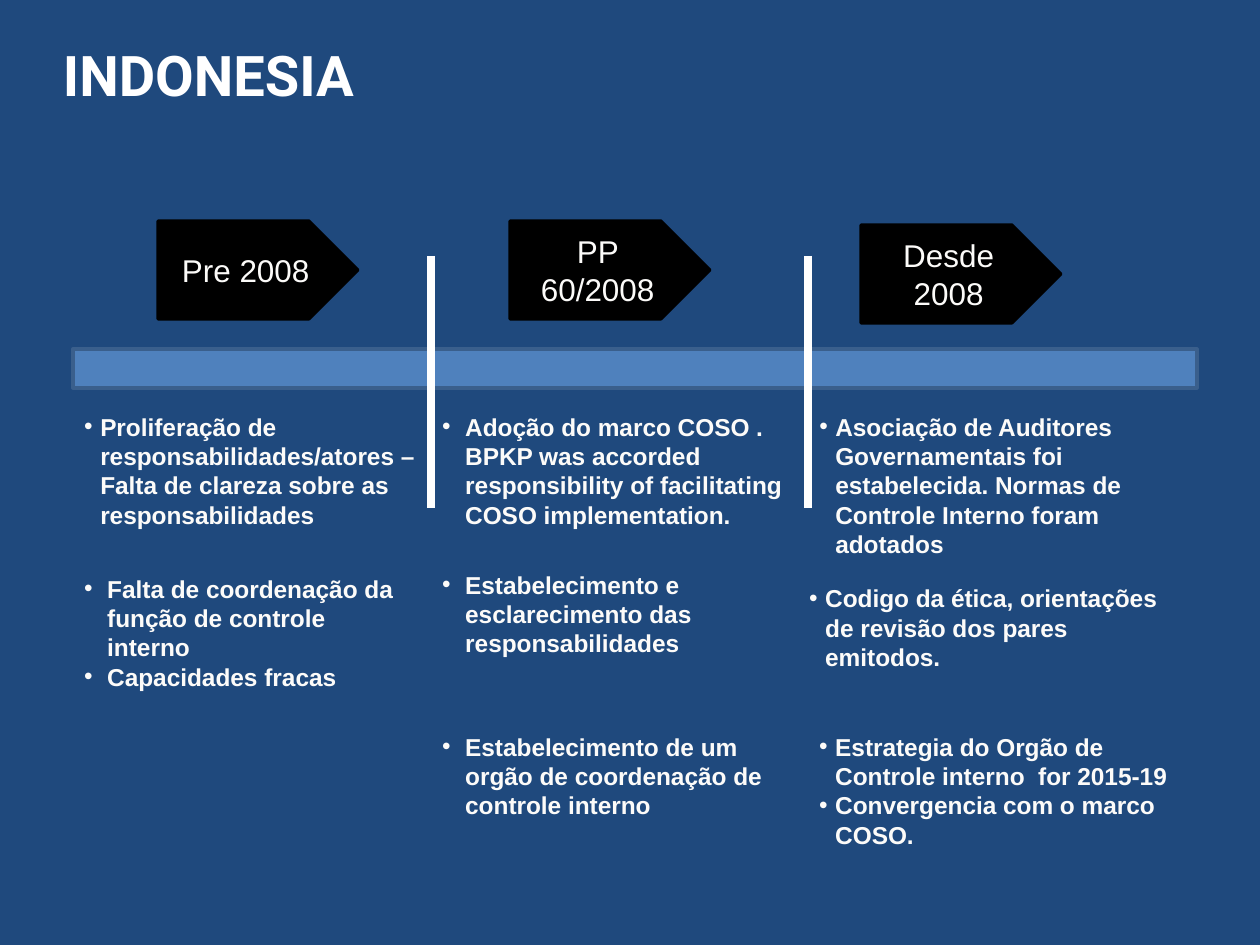
from dataclasses import dataclass

from lxml import etree
from pptx import Presentation
from pptx.dml.color import RGBColor
from pptx.enum.shapes import MSO_CONNECTOR as Connector, MSO_SHAPE as Shape
from pptx.enum.text import MSO_ANCHOR as Anchor, MSO_AUTO_SIZE as AutoSize, PP_ALIGN as Align
from pptx.oxml.ns import qn
from pptx.util import Pt

EMU_PER_PX = 8000


def px(length):
    return length * EMU_PER_PX


@dataclass(frozen=True)
class Theme:
    background: str = "1F497D"
    title: str = "FFFFFF"
    text: str = "FCFBF9"
    tag: str = "000000"
    bar: str = "4F81BD"
    bar_line: str = "3A5F8C"
    divider: str = "FFFFFF"
    title_font: str = "Roboto"
    body_font: str = "Arial"
    title_size: float = 35.3
    tag_size: float = 19.8
    body_size: float = 15.4
    outline: float = 2
    divider_width: float = 4.5


class TimelineSlide:
    def __init__(self, slide, theme):
        self.slide = slide
        self.theme = theme
        fill = slide.background.fill
        fill.solid()
        fill.fore_color.rgb = RGBColor.from_string(theme.background)

    def style(self, paragraph, size, color, name, bold=False):
        font = paragraph.font
        font.size, font.name, font.bold = Pt(size), name, bold
        font.color.rgb = RGBColor.from_string(color)

    def paragraphs(self, frame, texts):
        """Fill the frame with one paragraph per text and return them."""
        frame.text = "\n".join(texts)
        return frame.paragraphs

    def text_frame(self, left, top, width, height):
        box = self.slide.shapes.add_textbox(px(left), px(top), px(width), px(height))
        box.text_frame.word_wrap = True
        return box.text_frame

    def title(self, text, left, top, width, height):
        frame = self.text_frame(left, top, width, height)
        frame.margin_left = frame.margin_right = frame.margin_top = frame.margin_bottom = 0
        frame.vertical_anchor = Anchor.MIDDLE
        for paragraph in self.paragraphs(frame, [text]):
            paragraph.line_spacing = 0.9
            self.style(paragraph, self.theme.title_size, self.theme.title,
                       self.theme.title_font, bold=True)

    def block(self, kind, left, top, width, height, fill, line):
        shape = self.slide.shapes.add_shape(kind, px(left), px(top), px(width), px(height))
        shape.shadow.inherit = False
        shape.fill.solid()
        shape.fill.fore_color.rgb = RGBColor.from_string(fill)
        shape.line.color.rgb = RGBColor.from_string(line)
        shape.line.width = Pt(self.theme.outline)
        return shape

    def bar(self, left, top, width, height):
        self.block(Shape.RECTANGLE, left, top, width, height,
                   self.theme.bar, self.theme.bar_line)

    def tag(self, texts, left, top, width=200, height=98):
        shape = self.block(Shape.PENTAGON, left, top, width, height,
                           self.theme.tag, self.theme.tag)
        frame = shape.text_frame
        frame.word_wrap = True
        frame.vertical_anchor = Anchor.MIDDLE
        for paragraph in self.paragraphs(frame, texts):
            paragraph.alignment = Align.CENTER
            self.style(paragraph, self.theme.tag_size, self.theme.text, self.theme.body_font)

    def divider(self, left, top, bottom):
        line = self.slide.shapes.add_connector(
            Connector.STRAIGHT, px(left), px(top), px(left), px(bottom))
        line.line.color.rgb = RGBColor.from_string(self.theme.divider)
        line.line.width = Pt(self.theme.divider_width)
        etree.SubElement(line._element.spPr, qn("a:effectLst"))

    def bullets(self, texts, left, top, width, height, indent):
        frame = self.text_frame(left, top, width, height)
        frame.auto_size = AutoSize.SHAPE_TO_FIT_TEXT
        for paragraph in self.paragraphs(frame, texts):
            properties = paragraph._p.get_or_add_pPr()
            properties.set("marL", str(px(indent)))
            properties.set("indent", str(-px(indent)))
            etree.SubElement(properties, qn("a:buFont"), typeface=self.theme.body_font)
            etree.SubElement(properties, qn("a:buChar"), char="•")
            self.style(paragraph, self.theme.body_size, self.theme.text,
                       self.theme.body_font, bold=True)


TAGS = [
    (["Pre 2008"], 158, 221),
    (["PP 60/2008"], 510, 221),
    (["Desde", "2008"], 861, 225),
]
DIVIDERS = [431, 808]
FIRST, SECOND, THIRD = 73, *DIVIDERS
NARROW, WIDE = 16, 23

# texts, left, top, width, height, indent
NOTES = [
    (["Proliferação de responsabilidades/atores – Falta de clareza sobre as responsabilidades"],
     FIRST, 406, 357, 130, NARROW),
    (["Falta de coordenação da função de controle interno"], FIRST, 568, 346, 101, WIDE),
    (["Capacidades fracas"], FIRST, 656, 346, 41, WIDE),
    (["Adoção do marco COSO . BPKP was accorded responsibility of facilitating "
      "COSO implementation."], SECOND, 406, 368, 130, WIDE),
    (["Estabelecimento e esclarecimento das responsabilidades"], SECOND, 564, 368, 101, WIDE),
    (["Estabelecimento de um orgão de coordenação de controle interno"],
     SECOND, 726, 368, 101, WIDE),
    (["Asociação de Auditores Governamentais foi estabelecida. Normas de Controle "
      "Interno foram adotados"], THIRD, 406, 409, 160, NARROW),
    (["Codigo da ética, orientações de revisão dos pares emitodos."],
     798, 578, 389, 101, NARROW),
    (["Estrategia do Orgão de Controle interno  for 2015-19",
      "Convergencia com o marco COSO."], THIRD, 726, 389, 130, NARROW),
]


def main():
    presentation = Presentation()
    presentation.slide_width, presentation.slide_height = px(1260), px(945)
    slide = presentation.slides.add_slide(presentation.slide_layouts[6])
    timeline = TimelineSlide(slide, Theme())

    timeline.title("INDONESIA", 63, -32, 1197, 221)
    timeline.bar(FIRST, 349, 1124, 39)
    for left in DIVIDERS:
        timeline.divider(left, 256, 508)
    for tag in TAGS:
        timeline.tag(*tag)
    for note in NOTES:
        timeline.bullets(*note)

    presentation.save("out.pptx")


if __name__ == "__main__":
    main()
